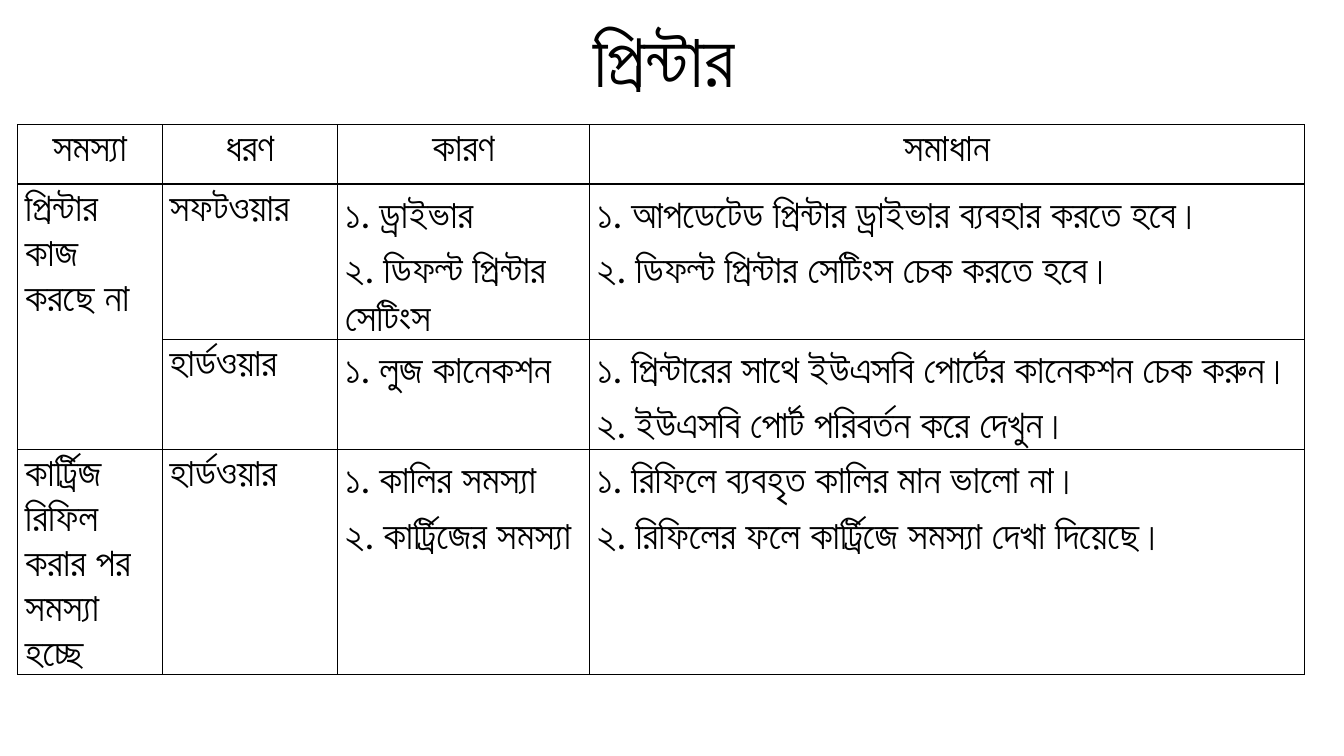
from lxml import etree
from pptx import Presentation
from pptx.dml.color import RGBColor
from pptx.enum.text import MSO_ANCHOR as Anchor, MSO_AUTO_SIZE as AutoSize, PP_ALIGN as Align
from pptx.oxml.ns import qn
from pptx.util import Pt

BLACK = "000000"
COLUMN_WIDTHS = [103.4, 125.3, 180, 510.5]
ROW_HEIGHTS = [42.5, 110.7, 78.6, 160.7]
ROWS = [
    [["সমস্যা"], ["ধরণ"], ["কারণ"], ["সমাধান"]],
    [["প্রিন্টার কাজ করছে না"], ["সফটওয়ার"],
     ["১. ড্রাইভার", "২. ডিফল্ট প্রিন্টার সেটিংস"],
     ["১. আপডেটেড প্রিন্টার ড্রাইভার ব্যবহার করতে হবে।",
      "২. ডিফল্ট প্রিন্টার সেটিংস চেক করতে হবে।"]],
    [[], ["হার্ডওয়ার"],
     ["১. লুজ কানেকশন"],
     ["১. প্রিন্টারের সাথে ইউএসবি পোর্টের কানেকশন চেক করুন।",
      "২. ইউএসবি পোর্ট পরিবর্তন করে দেখুন।"]],
    [["কার্ট্রিজ রিফিল করার পর সমস্যা হচ্ছে"], ["হার্ডওয়ার"],
     ["১. কালির সমস্যা", "২. কার্ট্রিজের সমস্যা"],
     ["১. রিফিলে ব্যবহৃত কালির মান ভালো না।",
      "২. রিফিলের ফলে কার্ট্রিজে সমস্যা দেখা দিয়েছে।"]],
]


def color(value):
    return RGBColor.from_string(value)


def apply_format(target, values):
    for name, value in values.items():
        setattr(target, name, value)


def write_paragraph(paragraph, text, size, bold, **layout):
    run = paragraph.add_run()
    run.text = text
    apply_format(run.font, {"name": "Calibri", "size": Pt(size), "bold": bold})
    run.font.color.rgb = color(BLACK)
    apply_format(paragraph, layout)


def add_borders(cell, widths):
    """Draw the cell's sides; widths maps each side to points."""
    properties = cell._tc.get_or_add_tcPr()
    for index, (side, width) in enumerate(widths.items()):
        line = etree.Element(qn(f"a:ln{side}"), w=str(Pt(width)))
        fill = etree.SubElement(line, qn("a:solidFill"))
        etree.SubElement(fill, qn("a:srgbClr"), val=BLACK)
        properties.insert(index, line)


def add_title(slide, text, left, top, width, height):
    title = slide.shapes.title
    apply_format(title, {"left": Pt(left), "top": Pt(top),
                         "width": Pt(width), "height": Pt(height)})
    apply_format(title.text_frame, {"word_wrap": True, "auto_size": AutoSize.NONE,
                                    "vertical_anchor": Anchor.MIDDLE})
    write_paragraph(title.text_frame.paragraphs[0], text, 54, True,
                    alignment=Align.CENTER, line_spacing=0.9)


def fill_cell(cell, lines, row, column):
    header = row == 0
    apply_format(cell, {"margin_left": Pt(5.4), "margin_right": Pt(5.4),
                        "margin_top": 0, "margin_bottom": 0,
                        "vertical_anchor": Anchor.TOP})
    cell.fill.background()
    # A heavier rule separates the header from the problems
    add_borders(cell, {"L": 0.5, "R": 0.5, "T": 2 if row == 1 else 0.5,
                       "B": 2 if header else 0.5})
    for index, text in enumerate(lines):
        frame = cell.text_frame
        paragraph = frame.add_paragraph() if index else frame.paragraphs[0]
        write_paragraph(paragraph, text, 28, header, line_spacing=1.15,
                        space_before=Pt(0), space_after=Pt(0),
                        alignment=Align.CENTER if header else Align.LEFT)


def add_problem_table(slide, left, top):
    frame = slide.shapes.add_table(len(ROWS), len(COLUMN_WIDTHS), Pt(left), Pt(top),
                                   Pt(sum(COLUMN_WIDTHS)), Pt(sum(ROW_HEIGHTS)))
    table = frame.table
    table.horz_banding = False
    for column, width in zip(table.columns, COLUMN_WIDTHS):
        column.width = Pt(width)
    for row, height in zip(table.rows, ROW_HEIGHTS):
        row.height = Pt(height)
    for row, contents in enumerate(ROWS):
        for column, lines in enumerate(contents):
            fill_cell(table.cell(row, column), lines, row, column)
    # One problem covers both software and hardware
    table.cell(1, 0).merge(table.cell(2, 0))


def main():
    presentation = Presentation()
    apply_format(presentation, {"slide_width": Pt(960), "slide_height": Pt(540)})
    slide = presentation.slides.add_slide(presentation.slide_layouts[5])
    add_title(slide, "প্রিন্টার", 60, 13, 828, 63.4)
    add_problem_table(slide, 12.4, 89)
    presentation.save("out.pptx")


if __name__ == "__main__":
    main()
